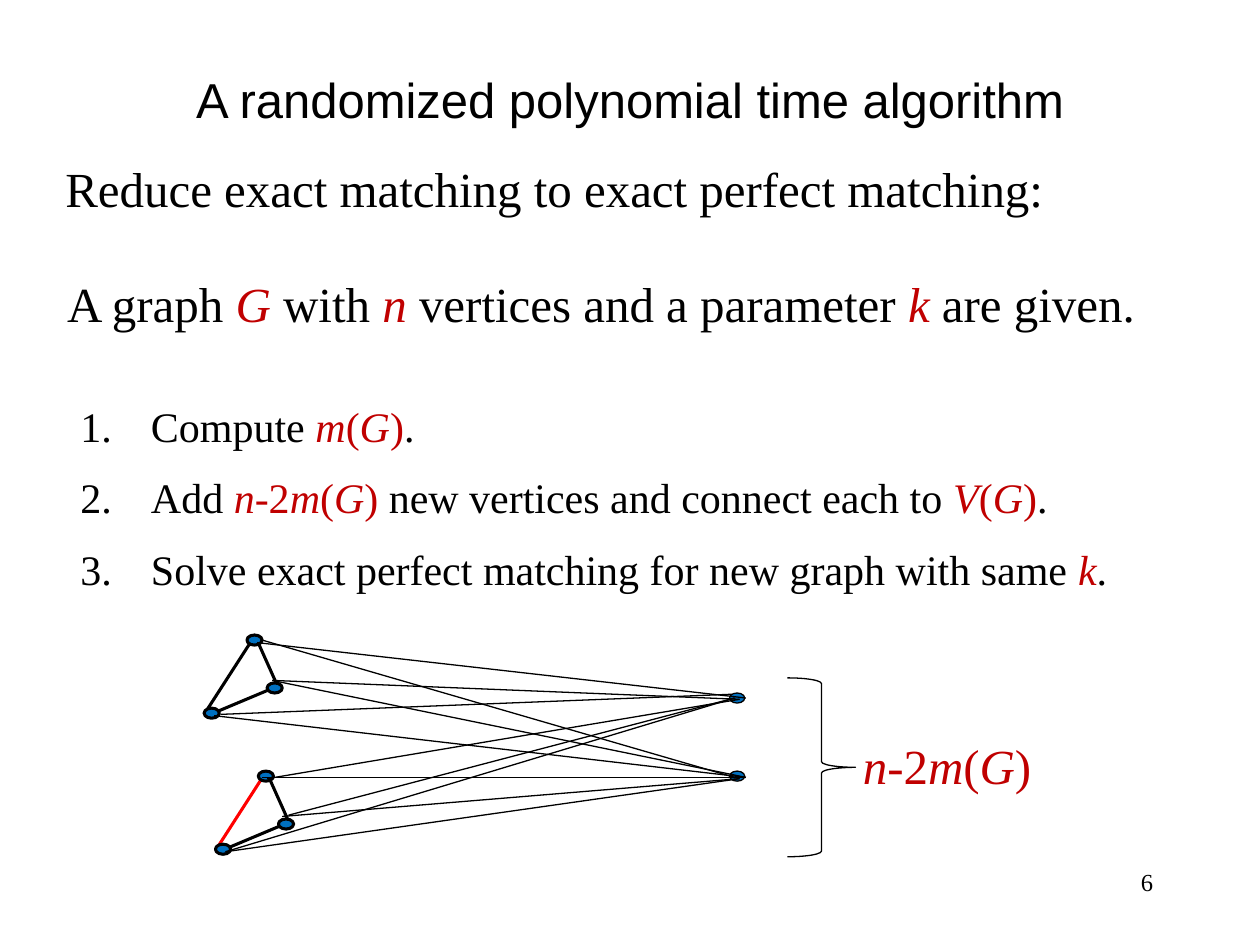
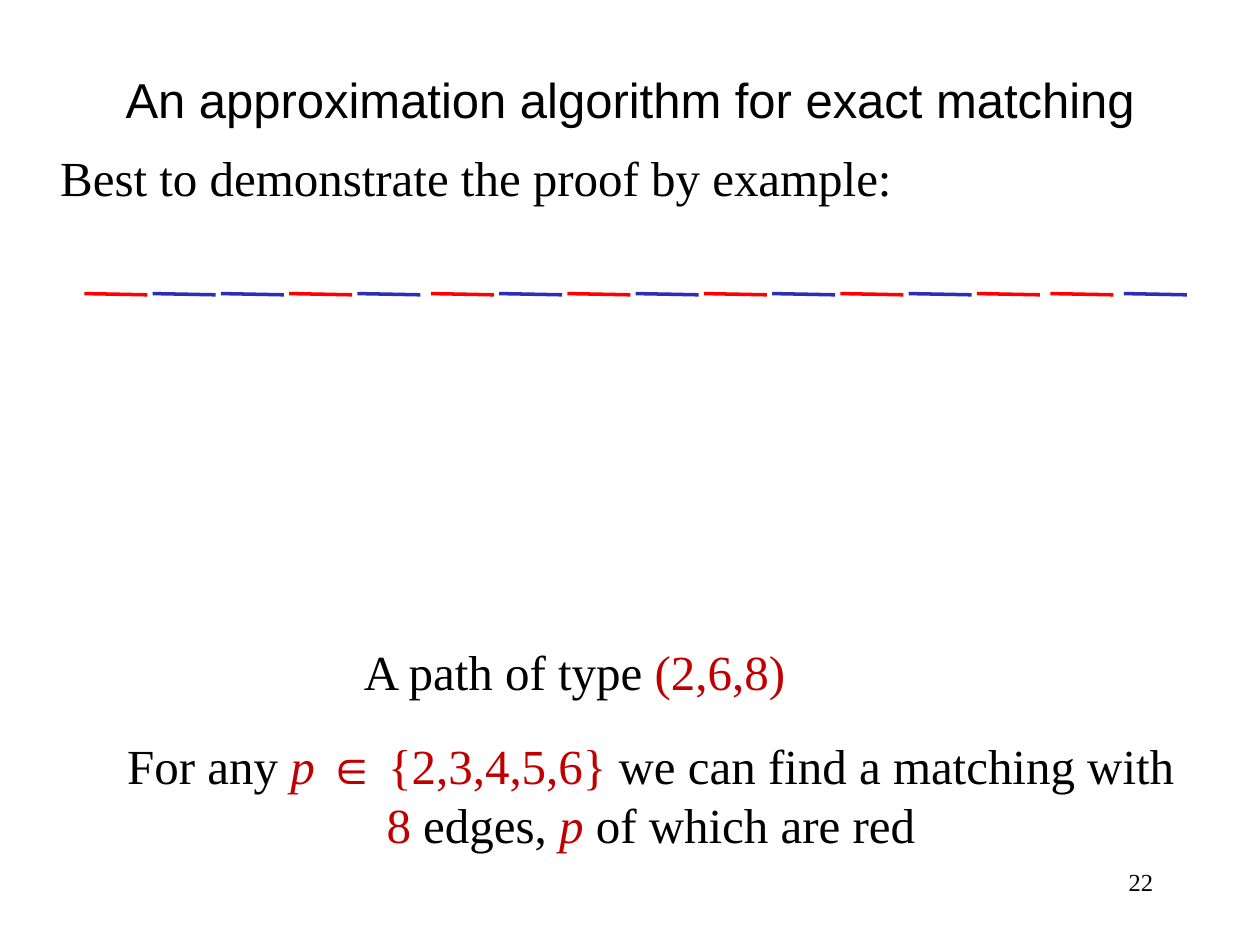
from dataclasses import dataclass
from typing import NamedTuple

from lxml import etree
from pptx import Presentation
from pptx import util as u
from pptx.dml.color import RGBColor
from pptx.enum import shapes, text
from pptx.oxml import ns

BLACK, WHITE, ACCENT = "000000", "FFFFFF", "C00000"
NODE_BLUE, RED, EDGE_BLUE = "0070C0", "FF0000", "2D2DB9"
SERIF, SANS = "Times New Roman", "Arial"
LEFT, CENTER, RIGHT = text.PP_ALIGN.LEFT, text.PP_ALIGN.CENTER, text.PP_ALIGN.RIGHT
THIN, THICK = 0.75, 1.75


class Run(NamedTuple):
    text: str
    color: str = BLACK
    italic: bool = False


class Point(NamedTuple):
    x: float
    y: float


class Box(NamedTuple):
    left: float
    top: float
    width: float
    height: float

    def inches(self) -> list[u.Length]:
        return [u.Inches(v) for v in self]


@dataclass
class Style:
    size: float = 28
    font: str = SERIF
    align: text.PP_ALIGN = LEFT
    numbered: bool = False
    space_before: int = 50  # percent of a line


class Triangle(NamedTuple):
    origin: Point
    long_side: str


TITLE = Style(font=SANS, align=CENTER)
BODY, CENTERED = Style(), Style(align=CENTER)
STEPS = Style(size=24, numbered=True)
PAGE_NUMBER = Style(size=14, align=RIGHT, space_before=0)

NODE_SIZE = (0.12, 0.08)
TRIANGLES = [Triangle(Point(1.62, 5.04), BLACK), Triangle(Point(1.71, 6.12), RED)]
TRIANGLE_NODES = [Point(0.34, 0), Point(0, 0.58), Point(0.5, 0.38)]
LONG_SIDE = (Point(0, 0.63), Point(0.38, 0.04))
SHORT_SIDES = [(Point(0.05, 0.63), Point(0.55, 0.42)),
               (Point(0.59, 0.42), Point(0.42, 0.04))]
NEW_NODES = [Point(5.79, 5.5), Point(5.79, 6.12)]
NEW_EDGES = [
    (Point(5.92, 5.54), Point(2.04, 5.1)),
    (Point(5.87, 5.55), Point(2.16, 5.4)),
    (Point(5.81, 5.51), Point(1.75, 5.67)),
    (Point(5.87, 5.55), Point(2.12, 6.18)),
    (Point(5.83, 5.54), Point(2.29, 6.47)),
    (Point(5.83, 5.54), Point(1.79, 6.76)),
    (Point(5.92, 6.17), Point(1.7, 5.68)),
    (Point(5.92, 6.17), Point(2.16, 5.4)),
    (Point(5.83, 6.17), Point(2.08, 5.08)),
    (Point(5.92, 6.17), Point(2.08, 6.17)),
    (Point(5.87, 6.18), Point(2.24, 6.48)),
    (Point(5.87, 6.18), Point(1.79, 6.76)),
]

PATH_COLORS = "RBBRBRBRBRBRBRRB"
PATH_START = Point(0.67, 2.33)
EDGE_LENGTH = 0.5
EDGE_PITCH = 13 / 24
WIDER_BEFORE = (5, 14, 15)  # edges with a wider gap on their left
EXTRA_GAP = 1 / 24


def rgb(color: str) -> RGBColor:
    return RGBColor.from_string(color)


def var(name: str) -> Run:
    return Run(name, ACCENT, True)


def math(symbols: str) -> Run:
    return Run(symbols, ACCENT)


def call(function: str) -> list[Run]:
    return [var(function), math("("), var("G"), math(")")]


def new_vertex_count() -> list[Run]:
    return [var("n"), math("-2"), *call("m")]


def format_paragraph(p, style: Style) -> None:
    """Set alignment, relative space before and numbering."""
    p.alignment = style.align
    ppr = p._p.get_or_add_pPr()
    if style.space_before:
        before = etree.SubElement(ppr, ns.qn("a:spcBef"))
        etree.SubElement(before, ns.qn("a:spcPct"), val=str(style.space_before * 1000))
    if style.numbered:
        indent = u.Inches(0.56)
        ppr.set("marL", str(indent))
        ppr.set("indent", str(-indent))
        etree.SubElement(ppr, ns.qn("a:buAutoNum"), type="arabicPeriod")


def add_text(s, box: Box, style: Style, *paragraphs: list[Run]) -> None:
    tf = s.shapes.add_textbox(*box.inches()).text_frame
    tf.word_wrap = True
    for i, runs in enumerate(paragraphs):
        p = tf.add_paragraph() if i else tf.paragraphs[0]
        format_paragraph(p, style)
        for run in runs:
            r = p.add_run()
            r.text = run.text
            r.font.name = style.font
            r.font.size = u.Pt(style.size)
            r.font.italic = run.italic
            r.font.color.rgb = rgb(run.color)


def add_line(s, start: Point, end: Point, color: str = BLACK, width: float = THIN) -> None:
    ends = [u.Inches(v) for v in (*start, *end)]
    line = s.shapes.add_connector(shapes.MSO_CONNECTOR.STRAIGHT, *ends)
    line.line.color.rgb = rgb(color)
    line.line.width = u.Pt(width)
    etree.SubElement(line._element.spPr, ns.qn("a:effectLst"))


def add_outline(s, kind: shapes.MSO_SHAPE, box: Box, width: float, fill: str = "") -> None:
    """Add a black-lined shape, unfilled when no fill is given."""
    sp = s.shapes.add_shape(kind, *box.inches())
    sp.shadow.inherit = False
    sp.line.color.rgb = rgb(BLACK)
    sp.line.width = u.Pt(width)
    if fill:
        sp.fill.solid()
        sp.fill.fore_color.rgb = rgb(fill)
    else:
        sp.fill.background()


def add_node(s, corner: Point, width: float) -> None:
    add_outline(s, shapes.MSO_SHAPE.OVAL, Box(*corner, *NODE_SIZE), width, NODE_BLUE)


def add_triangle(s, triangle: Triangle) -> None:
    def place(offset: Point) -> Point:
        return Point(triangle.origin.x + offset.x, triangle.origin.y + offset.y)

    sides = [(LONG_SIDE, triangle.long_side)] + [(side, BLACK) for side in SHORT_SIDES]
    for (start, end), color in sides:
        add_line(s, place(start), place(end), color, THICK)
    for node in TRIANGLE_NODES:
        add_node(s, place(node), THICK)


def add_slide(prs, title: str, number: int):
    s = prs.slides.add_slide(prs.slide_layouts[6])
    s.background.fill.solid()
    s.background.fill.fore_color.rgb = rgb(WHITE)
    add_text(s, Box(7.17, 6.83, 2.08, 0.5), PAGE_NUMBER, [Run(str(number))])
    add_text(s, Box(0.46, 0.5, 9.08, 0.57), TITLE, [Run(title)])
    return s


def build_reduction(prs) -> None:
    s = add_slide(prs, "A randomized polynomial time algorithm", 6)
    add_text(s, Box(0.42, 1.21, 9.21, 0.57), BODY,
             [Run("Reduce exact matching to exact perfect matching:")])
    add_text(s, Box(0.25, 2.12, 9.04, 0.57), CENTERED,
             [Run("A graph "), var("G"), Run(" with "), var("n"),
              Run(" vertices and a parameter "), var("k"), Run(" are given.")])
    add_text(s, Box(0.54, 3.13, 8.74, 1.72), STEPS,
             [Run("Compute "), *call("m"), Run(".")],
             [Run("Add "), *new_vertex_count(),
              Run(" new vertices and connect each to "), *call("V"), Run(".")],
             [Run("Solve exact perfect matching for new graph with same "),
              var("k"), Run(".")])

    for node in NEW_NODES:
        add_node(s, node, THIN)
    add_outline(s, shapes.MSO_SHAPE.RIGHT_BRACE, Box(6.25, 5.38, 0.54, 1.42), THIN)
    add_text(s, Box(6.46, 5.79, 2.21, 0.57), CENTERED, [*new_vertex_count(), math(" ")])
    for triangle in TRIANGLES:
        add_triangle(s, triangle)
    for start, end in NEW_EDGES:
        add_line(s, start, end)


def build_path_example(prs) -> None:
    s = add_slide(prs, "An approximation algorithm for exact matching", 22)
    add_text(s, Box(0.38, 1.12, 9.04, 0.57), BODY,
             [Run("Best to demonstrate the proof by example:")])

    for i, letter in enumerate(PATH_COLORS):
        wider = sum(i >= edge for edge in WIDER_BEFORE)
        x = PATH_START.x + i * EDGE_PITCH + wider * EXTRA_GAP
        add_line(s, Point(x, PATH_START.y), Point(x + EDGE_LENGTH, PATH_START.y + 0.01),
                 RED if letter == "R" else EDGE_BLUE, 2)

    add_text(s, Box(2.33, 5.04, 4.46, 0.57), CENTERED,
             [Run("A path of type "), math("(2,6,8)")])
    add_text(s, Box(0.79, 5.79, 8.75, 1.04), CENTERED,
             [Run("For any "), var("p "), math("∈ {2,3,4,5,6}"),
              Run(" we can find a matching with "), math("8"), Run(" edges, "),
              var("p"), Run(" of which are red")])


def main() -> None:
    prs = Presentation()
    prs.slide_width, prs.slide_height = u.Inches(10), u.Inches(7.5)
    build_reduction(prs)
    build_path_example(prs)
    prs.save("out.pptx")


if __name__ == "__main__":
    main()
